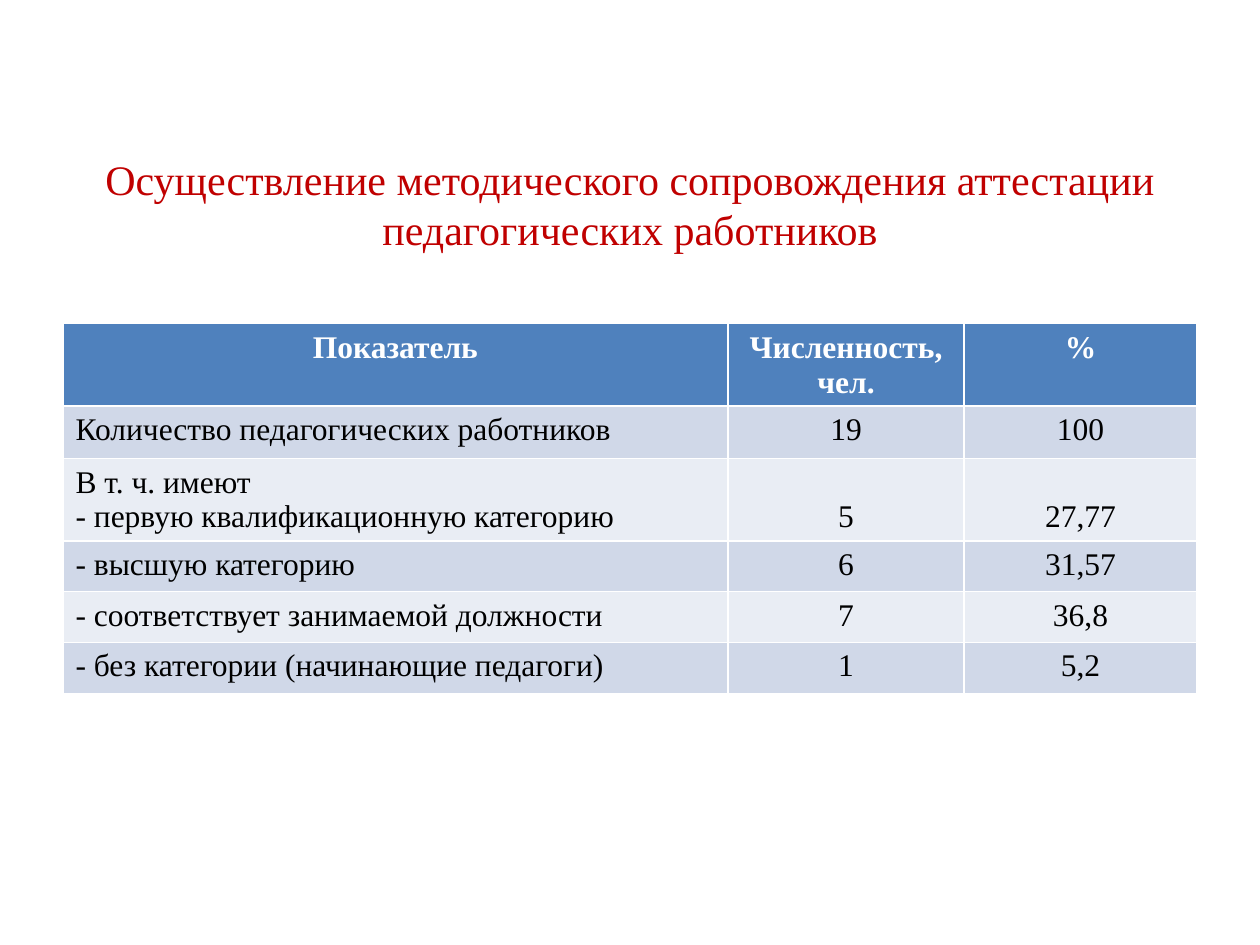
from dataclasses import dataclass

from pptx import Presentation
from pptx import util as u
from pptx.dml.color import RGBColor
from pptx.enum import text
from pptx.slide import Slide

COLORS = {
    "title": "C00000",
    "header": "4F81BD",
    "header_text": "FFFFFF",
    "body_text": "000000",
    "odd_row": "D0D8E8",
    "even_row": "E9EDF4",
}
LEFT, WIDTH = 36, 648
COLUMN_WIDTHS = [380, 135, 133]
ROW_HEIGHTS = [47, 30, 47, 29, 29, 29]
ROWS = [
    ["Показатель", "Численность, чел.", "%"],
    ["Количество педагогических работников", "19", "100"],
    ["В т. ч. имеют\n- первую квалификационную категорию", "5", "27,77"],
    ["- высшую категорию", "6", "31,57"],
    ["- соответствует занимаемой должности", "7", "36,8"],
    ["- без категории (начинающие педагоги)", "1", "5,2"],
]


@dataclass
class SlideBuilder:
    slide: Slide
    font: str = "Times New Roman"
    title_size: int = 24
    table_size: int = 18

    def fill_text(self, frame, content, color, size, align, bold=False):
        frame.text = content
        values = {"name": self.font, "size": u.Pt(size), "bold": bold}
        for paragraph in frame.paragraphs:
            paragraph.alignment = align
            for run in paragraph.runs:
                for name, value in values.items():
                    setattr(run.font, name, value)
                run.font.color.rgb = RGBColor.from_string(COLORS[color])

    def title(self, content, top, height):
        shape = self.slide.shapes.title
        box = {"left": LEFT, "top": top, "width": WIDTH, "height": height}
        for name, value in box.items():
            setattr(shape, name, u.Pt(value))
        shape.text_frame.vertical_anchor = text.MSO_ANCHOR.MIDDLE
        self.fill_text(shape.text_frame, content, "title", self.title_size,
                       text.PP_ALIGN.CENTER)

    def table(self, rows, top):
        box = (LEFT, top, WIDTH, sum(ROW_HEIGHTS))
        table = self.slide.shapes.add_table(
            len(rows), len(COLUMN_WIDTHS), *map(u.Pt, box)).table
        for column, width in zip(table.columns, COLUMN_WIDTHS):
            column.width = u.Pt(width)
        for index, (row, height) in enumerate(zip(rows, ROW_HEIGHTS)):
            table.rows[index].height = u.Pt(height)
            self.table_row(table, index, row)

    def table_row(self, table, index, row):
        is_header = index == 0
        fill = "header" if is_header else "odd_row" if index % 2 else "even_row"
        color = "header_text" if is_header else "body_text"
        for column, content in enumerate(row):
            cell = table.cell(index, column)
            cell.fill.solid()
            cell.fill.fore_color.rgb = RGBColor.from_string(COLORS[fill])
            centered = is_header or column > 0
            align = text.PP_ALIGN.CENTER if centered else text.PP_ALIGN.LEFT
            self.fill_text(cell.text_frame, content, color, self.table_size,
                           align, bold=is_header)
            # Numbers line up with the last line of a two-line label.
            if column > 0 and "\n" in row[0]:
                cell.vertical_anchor = text.MSO_ANCHOR.BOTTOM


def main():
    presentation = Presentation()
    presentation.slide_width, presentation.slide_height = u.Pt(720), u.Pt(540)
    title_only = presentation.slide_layouts.get_by_name("Title Only")
    builder = SlideBuilder(presentation.slides.add_slide(title_only))
    builder.title("Осуществление методического сопровождения аттестации "
                  "педагогических работников", top=71.5, height=90)
    builder.table(ROWS, top=185)
    presentation.save("out.pptx")


if __name__ == "__main__":
    main()
